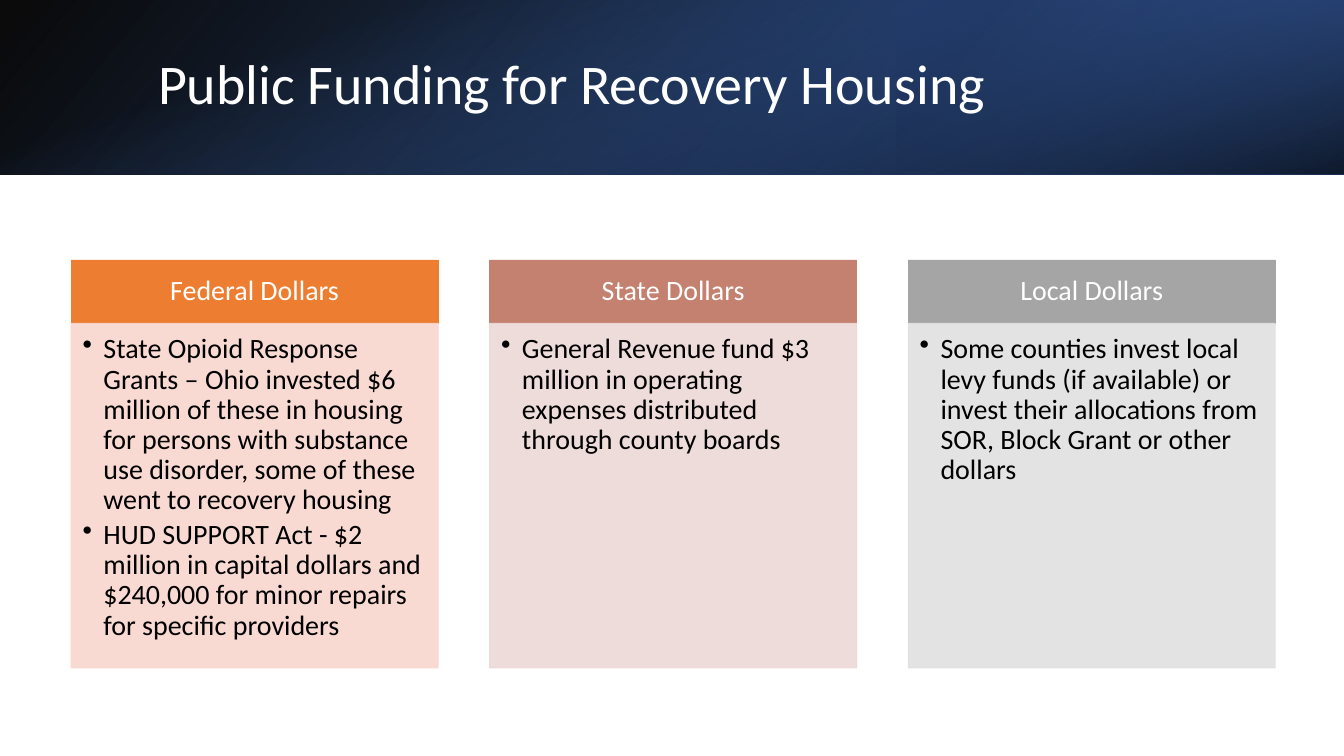
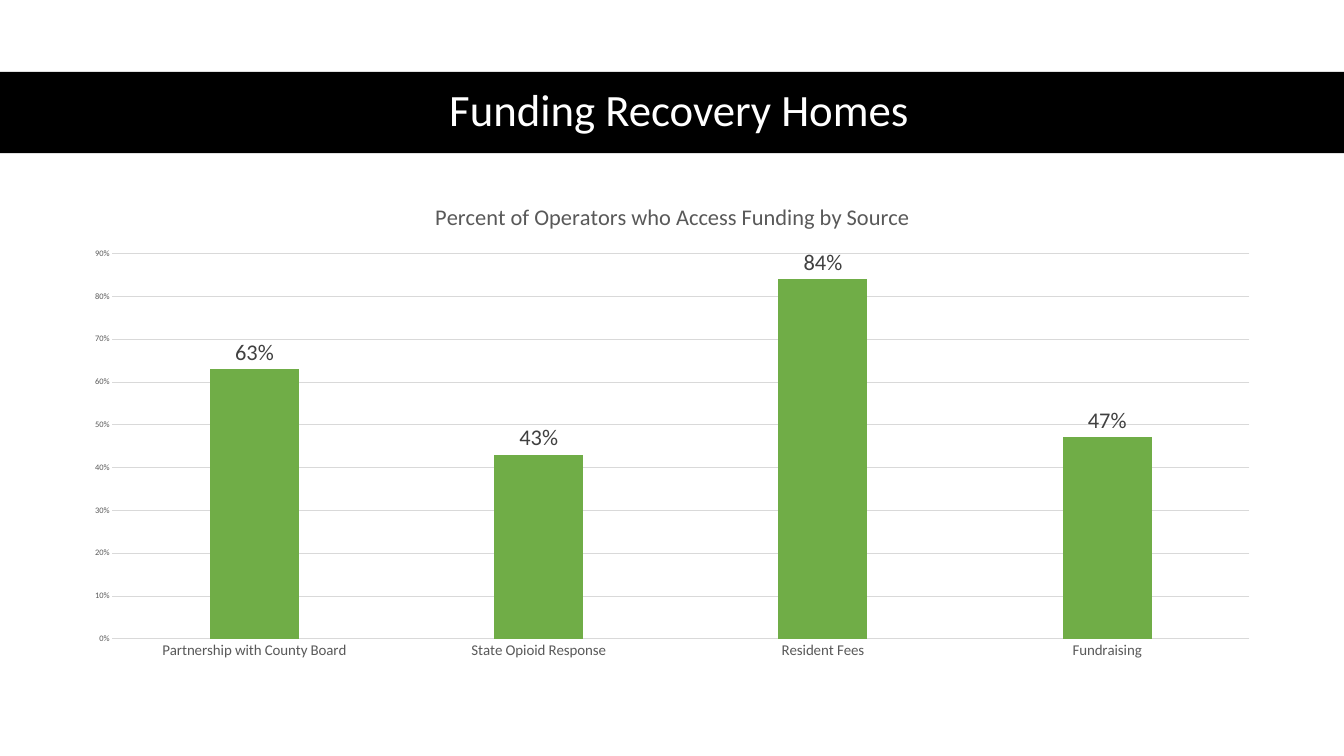
from pptx import Presentation
from pptx.chart.data import CategoryChartData
from pptx.dml.color import RGBColor as RGB
from pptx.enum.chart import XL_CHART_TYPE as CT, XL_LABEL_POSITION as LP, XL_TICK_MARK as TM
from pptx.enum.shapes import MSO_SHAPE as SHAPE
from pptx.enum.text import MSO_ANCHOR as ANCHOR, MSO_AUTO_SIZE as AUTO, PP_ALIGN as ALIGN
from pptx.oxml import parse_xml
from pptx.oxml.ns import nsdecls, qn
from pptx.util import Cm, Pt
from lxml import etree

FONT = "Calibri"
COLORS = {
    "black": "000000", "white": "FFFFFF", "blue": "4472C4",
    "mid_blue": "2F5597", "navy": "203864",
    "orange": "ED7D31", "orange_tint": "F8D7CE",
    "rose": "C48170", "rose_tint": "EDD9D7",
    "gray": "A5A5A5", "gray_tint": "E1E1E1",
    "green": "70AD47", "label": "404040", "axis": "595959", "grid": "D9D9D9",
}
C = {name: RGB.from_string(value) for name, value in COLORS.items()}


def add_rect(s, box, color):
    sp = s.shapes.add_shape(SHAPE.RECTANGLE, *[Cm(v) for v in box])
    sp.shadow.inherit = False
    sp.fill.solid()
    sp.fill.fore_color.rgb = C[color]
    sp.line.fill.background()
    return sp


def add_text(sp, lines, size, color, align, anchor, after=0, insets=None):
    tf = sp.text_frame
    tf.word_wrap, tf.auto_size, tf.vertical_anchor = True, AUTO.NONE, anchor
    if insets:
        tf.margin_left, tf.margin_top, tf.margin_right, tf.margin_bottom = map(Cm, insets)
    for i, line in enumerate(lines):
        p = tf.add_paragraph() if i else tf.paragraphs[0]
        p.alignment, p.line_spacing, p.space_after = align, 0.9, Pt(after)
        r = p.add_run()
        r.text = line
        r.font.name, r.font.size, r.font.color.rgb = FONT, Pt(size), C[color]


prs = Presentation()
prs.slide_width, prs.slide_height = Cm(50.8), Cm(28.58)
W, BAND_H = 50.8, 6.58
title_only = prs.slide_layouts[5]

# Slide 1: layered gradient band; stops are (position, colour, opacity)
s = prs.slides.add_slide(title_only)
side = (W - BAND_H) / 2
bands = [
    ((0, 0, W, BAND_H), 0, True, 140, [(0, "black", 96), (100, "mid_blue", 100)]),
    ((33.87, 0, 16.93, BAND_H), 180, True, 320, [(19, "navy", 68), (100, "blue", 79)]),
    ((side, -side, BAND_H, W), 90, False, 340, [(23, "blue", 0), (99, "black", 74)]),
]
for box, rotation, flip, angle, stops in bands:
    sp = add_rect(s, box, "black")
    sp.rotation = rotation
    spPr = sp.element.spPr
    if flip:
        spPr.find(qn("a:xfrm")).set("flipH", "1")
    gs = "".join(
        f'<a:gs pos="{pos * 1000}"><a:srgbClr val="{COLORS[color]}">'
        f'<a:alpha val="{alpha * 1000}"/></a:srgbClr></a:gs>'
        for pos, color, alpha in stops)
    grad = parse_xml(
        f'<a:gradFill {nsdecls("a")} rotWithShape="1"><a:gsLst>{gs}</a:gsLst>'
        f'<a:lin ang="{angle * 60000}" scaled="0"/></a:gradFill>')
    spPr.replace(spPr.find(qn("a:solidFill")), grad)

# Slide 1: title, in front of the band
title = s.shapes.title
title.element.getparent().append(title.element)
title.left, title.top, title.width, title.height = Cm(5.72), Cm(1.45), Cm(41.86), Cm(3.66)
add_text(title, ["Public Funding for Recovery Housing"], 60, "white", ALIGN.LEFT, ANCHOR.MIDDLE)

# Slide 1: three funding cards
cards = [
    ("Federal Dollars", "orange", [
        "State Opioid Response Grants – Ohio invested $6 million of these in housing for "
        "persons with substance use disorder, some of these went to recovery housing",
        "HUD SUPPORT Act - $2 million in capital dollars and $240,000 for minor repairs "
        "for specific providers"]),
    ("State Dollars", "rose", [
        "General Revenue fund $3 million in operating expenses distributed through "
        "county boards"]),
    ("Local Dollars", "gray", [
        "Some counties invest local levy funds (if available) or invest their allocations "
        "from SOR, Block Grant or other dollars"]),
]
CARD_W, CARD_STEP = 13.87, 15.82
for i, (heading, color, items) in enumerate(cards):
    left = 2.69 + i * CARD_STEP
    head = add_rect(s, (left, 9.83, CARD_W, 2.39), color)
    body = add_rect(s, (left, 12.22, CARD_W, 13.03), color + "_tint")
    for sp, line_color in ((head, color), (body, color + "_tint")):
        sp.line.color.rgb = C[line_color]
        sp.line.width = Pt(1)
    for clr in body.element.spPr.iter(qn("a:srgbClr")):
        etree.SubElement(clr, qn("a:alpha")).set("val", "90000")
    add_text(head, [heading], 30, "white", ALIGN.CENTER, ANCHOR.MIDDLE,
             insets=(0.58, 0.33, 0.58, 0.33))
    add_text(body, items, 30, "black", ALIGN.LEFT, ANCHOR.TOP, after=4.5,
             insets=(0.43, 0.43, 0.58, 0.66))
    for p in body.text_frame.paragraphs:
        pPr = p._p.get_or_add_pPr()
        pPr.set("marL", str(Cm(0.79)))
        pPr.set("indent", str(-Cm(0.79)))
        etree.SubElement(pPr, qn("a:buChar")).set("char", "•")

# Slide 2: black band and title
s = prs.slides.add_slide(title_only)
add_rect(s, (0, 2.72, W, 3.07), "black")
title = s.shapes.title
title.element.getparent().append(title.element)
title.left, title.top, title.width, title.height = Cm(2.31), Cm(2.69), Cm(46.71), Cm(3.1)
add_text(title, ["Funding Recovery Homes"], 48, "white", ALIGN.CENTER, ANCHOR.MIDDLE,
         insets=(0.38, 0.18, 0.38, 0.18))

# Slide 2: column chart
chart_title = "Percent of Operators who Access Funding by Source"
data = CategoryChartData(number_format="0%")
data.categories = ["Partnership with County Board", "State Opioid Response",
                   "Resident Fees", "Fundraising"]
data.add_series(chart_title, [0.63, 0.43, 0.84, 0.47])
chart = s.shapes.add_chart(CT.COLUMN_CLUSTERED, Cm(2.69), Cm(6.99), Cm(45.44), Cm(18.31),
                           data).chart
chart.has_legend = False
chart.font.name, chart.font.size = FONT, Pt(10)
chart.has_title = True
chart.chart_title.include_in_layout = False
r = chart.chart_title.text_frame.paragraphs[0].add_run()
r.text = chart_title
r.font.bold = False

plot = chart.plots[0]
plot.gap_width, plot.overlap, plot.vary_by_categories = 219, -27, False
fill = plot.series[0].format.fill
fill.solid()
fill.fore_color.rgb = C["green"]
plot.has_data_labels = True
labels = plot.data_labels
labels.show_value, labels.position = True, LP.OUTSIDE_END
labels.number_format, labels.number_format_is_linked = "0%", False

# Slide 2: axes and chart fonts
cat, val = chart.category_axis, chart.value_axis
for axis in (cat, val):
    axis.major_tick_mark = axis.minor_tick_mark = TM.NONE
val.minimum_scale, val.maximum_scale, val.major_unit = 0, 0.9, 0.1
val.tick_labels.number_format, val.tick_labels.number_format_is_linked = "0%", False
val.format.line.fill.background()
val.has_major_gridlines = True
for line in (cat.format.line, val.major_gridlines.format.line):
    line.color.rgb, line.width = C["grid"], Pt(0.75)
for font, size, color in ((r.font, 24, "axis"), (labels.font, 24, "label"),
                          (cat.tick_labels.font, 16, "axis"),
                          (val.tick_labels.font, 9, "axis")):
    font.name, font.size, font.color.rgb = FONT, Pt(size), C[color]

prs.save("out.pptx")
